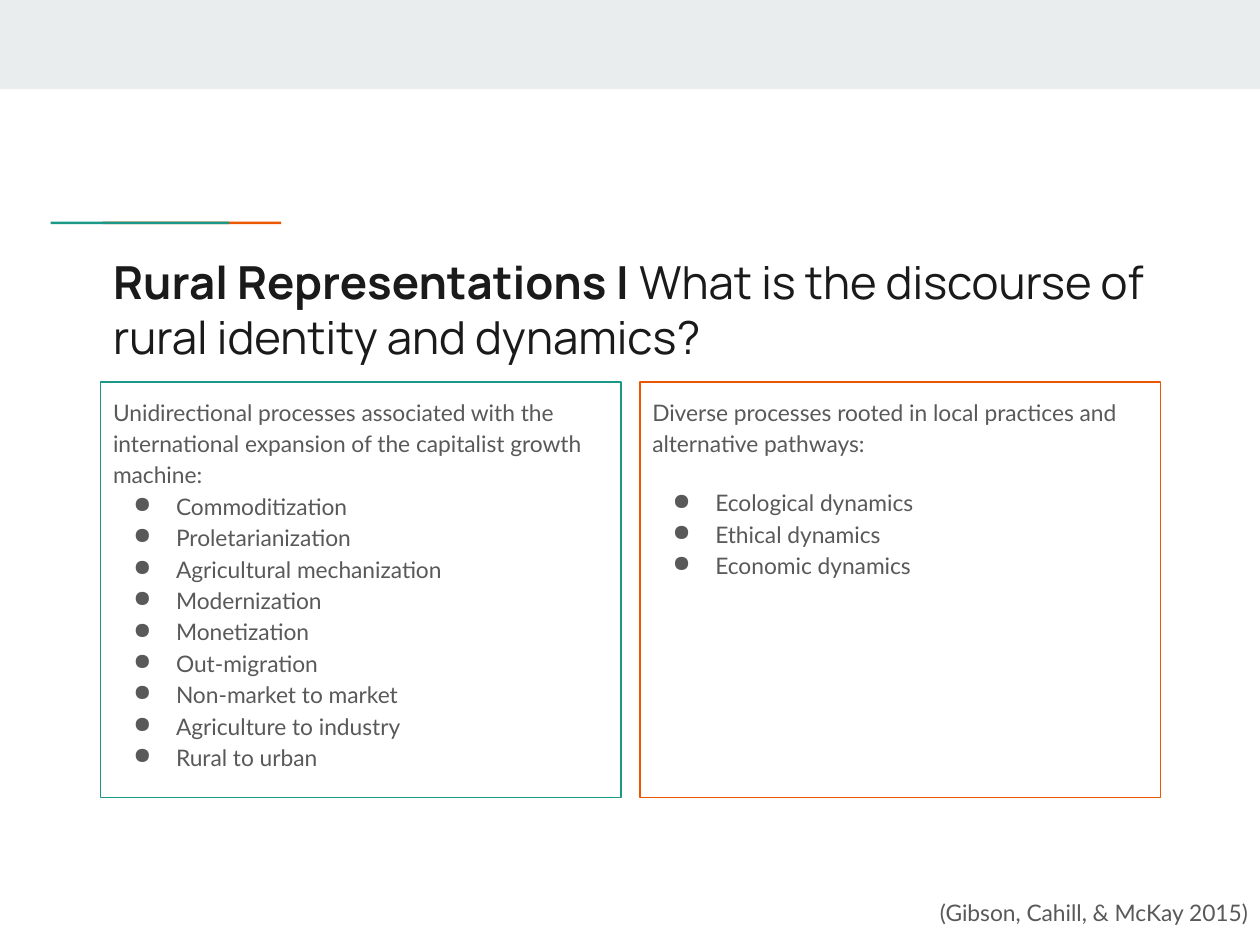
from dataclasses import dataclass

from lxml import etree
from pptx import Presentation
from pptx.dml.color import RGBColor
from pptx.enum import shapes, text
from pptx.oxml import ns
from pptx.util import Cm, Pt

COLORS = {
    "band": "E9EDEE",
    "teal": "1A9988",
    "orange": "EB5600",
    "title": "1A1A1A",
    "body": "595959",
}


@dataclass
class SlideBuilder:
    page: object
    title_font: str = "Manrope"
    body_font: str = "Lato"
    title_size: int = 26
    body_size: int = 13
    inset: float = 0.25

    def color(self, name):
        return RGBColor.from_string(COLORS[name])

    def bar(self, left, top, width, height, color):
        box = self.page.shapes.add_shape(
            shapes.MSO_SHAPE.RECTANGLE, Cm(left), Cm(top), Cm(width), Cm(height))
        box.shadow.inherit = False
        box.fill.solid()
        box.fill.fore_color.rgb = self.color(color)
        box.line.fill.background()

    def text_box(self, left, top, width, height):
        box = self.page.shapes.add_textbox(Cm(left), Cm(top), Cm(width), Cm(height))
        frame = box.text_frame
        frame.word_wrap = True
        frame.margin_left = frame.margin_right = Cm(self.inset)
        frame.margin_top = frame.margin_bottom = Cm(self.inset)
        return box

    def style_span(self, span, font, size, color, bold=False):
        span.font.name = font
        span.font.size = Pt(size)
        span.font.bold = bold
        span.font.color.rgb = self.color(color)

    def style_body(self, para):
        para.line_spacing = 1.15
        for span in para.runs:
            self.style_span(span, self.body_font, self.body_size, "body")

    def title(self, left, top, width, height, lead, question):
        para = self.text_box(left, top, width, height).text_frame.paragraphs[0]
        for words, bold in ((lead, True), (question, False)):
            span = para.add_run()
            span.text = words
            self.style_span(span, self.title_font, self.title_size, "title", bold)

    def bullet(self, para):
        properties = para._p.get_or_add_pPr()
        properties.set("marL", str(Cm(1.27)))
        properties.set("indent", str(-Cm(0.86)))
        etree.SubElement(properties, ns.qn("a:buChar")).set("char", "●")

    def panel(self, left, top, width, height, color, intro, items, gap=0):
        box = self.text_box(left, top, width, height)
        box.line.color.rgb = self.color(color)
        box.line.width = Pt(0.75)
        box.text_frame.text = "\n".join([intro, *items])
        intro_para, *item_paras = box.text_frame.paragraphs
        self.style_body(intro_para)
        for para in item_paras:
            self.style_body(para)
            self.bullet(para)
        item_paras[0].space_before = Pt(gap)

    def citation(self, left, top, width, height, words):
        para = self.text_box(left, top, width, height).text_frame.paragraphs[0]
        para.text = words
        para.alignment = text.PP_ALIGN.RIGHT
        self.style_body(para)


def main():
    deck = Presentation()
    deck.slide_width, deck.slide_height = Cm(25.4), Cm(19.05)
    builder = SlideBuilder(deck.slides.add_slide(deck.slide_layouts[6]))

    builder.bar(0, 0, 25.4, 1.8, "band")
    for left, color in ((2.07, "orange"), (1.02, "teal")):
        builder.bar(left, 4.47, 3.6, 0.05, color)

    builder.title(2.03, 4.88, 21.36, 1.98, "Rural Representations | ",
                  "What is the discourse of rural identity and dynamics?")

    panels = [
        ("teal",
         "Unidirectional processes associated with the international expansion "
         "of the capitalist growth machine:",
         ["Commoditization", "Proletarianization", "Agricultural mechanization",
          "Modernization", "Monetization", "Out-migration",
          "Non-market to market", "Agriculture to industry", "Rural to urban"], 0),
        ("orange",
         "Diverse processes rooted in local practices and alternative pathways:",
         ["Ecological dynamics", "Ethical dynamics", "Economic dynamics"], 16),
    ]
    for column, (color, intro, items, gap) in enumerate(panels):
        builder.panel(2.03 + column * 10.87, 7.7, 10.49, 8.38, color, intro, items, gap)

    builder.citation(17.07, 17.78, 8.33, 1.27, "(Gibson, Cahill, & McKay 2015)")
    deck.save("out.pptx")


if __name__ == "__main__":
    main()
